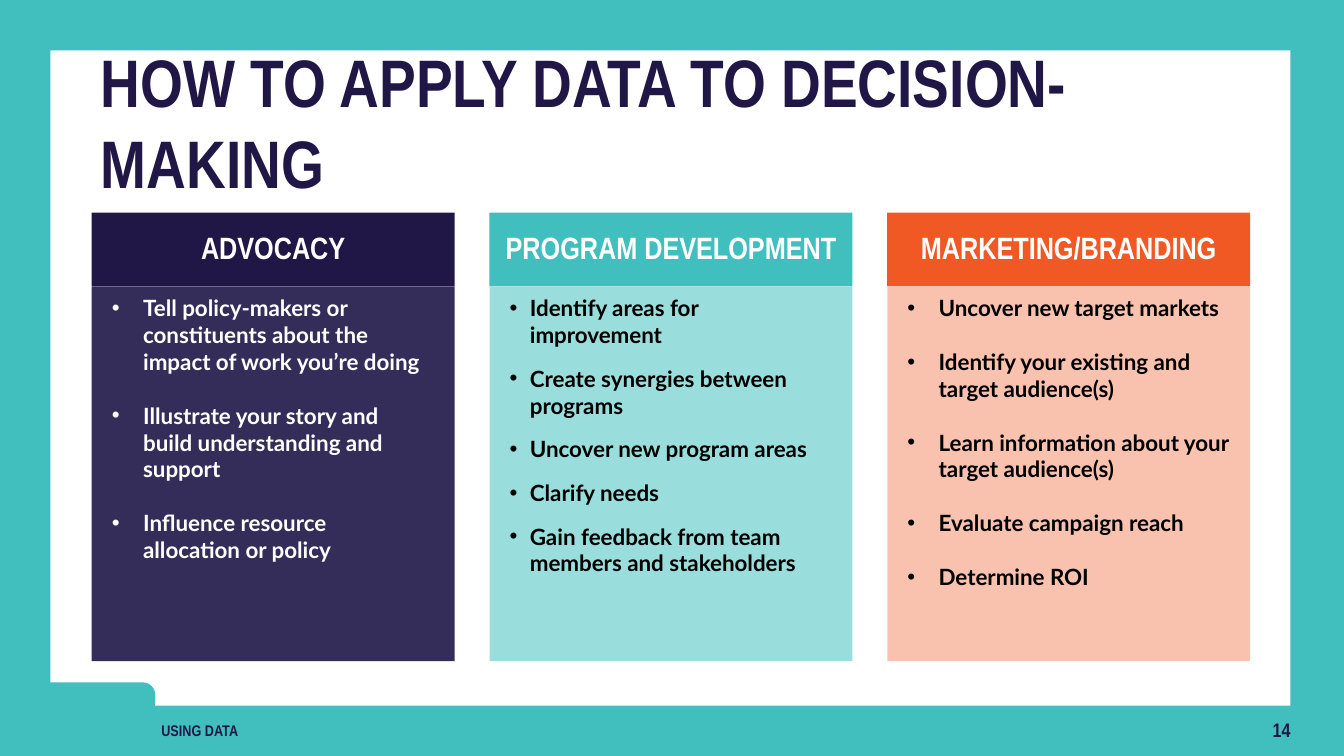
from dataclasses import dataclass

from lxml import etree
from pptx import Presentation
from pptx.dml.color import RGBColor
from pptx.enum.shapes import MSO_SHAPE
from pptx.enum.text import MSO_ANCHOR, MSO_AUTO_SIZE, PP_ALIGN
from pptx.oxml.ns import qn
from pptx.util import Inches, Pt

RECTANGLE, ROUNDED = MSO_SHAPE.RECTANGLE, MSO_SHAPE.ROUNDED_RECTANGLE
LEFT, CENTER, RIGHT = PP_ALIGN.LEFT, PP_ALIGN.CENTER, PP_ALIGN.RIGHT
TOP, MIDDLE, BOTTOM = MSO_ANCHOR.TOP, MSO_ANCHOR.MIDDLE, MSO_ANCHOR.BOTTOM
NO_AUTOFIT = MSO_AUTO_SIZE.NONE

COLORS = {
    "teal": "41BFBF", "navy": "201747", "orange": "F05824",
    "pale teal": "8FDBD9", "pale orange": "F9BCA7",
    "white": "FFFFFF", "black": "000000",
}
HEADING_FONT, LIST_FONT = "Arial Narrow", "Lato"

COLUMN_LEFT, COLUMN_WIDTH = 0.91, 3.6
COLUMN_PITCH = (8.8 - COLUMN_LEFT) / 2
HEADER_TOP, HEADER_HEIGHT, LIST_HEIGHT = 2.11, 0.73, 3.72


@dataclass
class Column:
    heading: str
    header_color: str
    list_color: str
    text_color: str
    placeholder: int
    indent: float
    gap: float
    right_inset: float
    items: list[str]


COLUMNS = [
    Column("ADVOCACY", "navy", "navy", "white", 2, 0.31, 19.2, 0.3, [
        "Tell policy-makers or constituents about the impact of work you’re doing",
        "Illustrate your story and build understanding and support",
        "Influence resource allocation or policy",
    ]),
    Column("PROGRAM DEVELOPMENT", "teal", "pale teal", "black", 3, 0.2, 12, 0.3, [
        "Identify areas for improvement",
        "Create synergies between programs",
        "Uncover new program areas",
        "Clarify needs",
        "Gain feedback from team members and stakeholders",
    ]),
    Column("MARKETING/BRANDING", "orange", "pale orange", "black", 4, 0.31, 19.2, 0.2, [
        "Uncover new target markets",
        "Identify your existing and target audience(s)",
        "Learn information about your target audience(s)",
        "Evaluate campaign reach",
        "Determine ROI",
    ]),
]


def color(name: str) -> RGBColor:
    return RGBColor.from_string(COLORS[name])


def place(shape, left: float, top: float, width: float, height: float) -> None:
    shape.left, shape.top = Inches(left), Inches(top)
    shape.width, shape.height = Inches(width), Inches(height)


def fill_shape(shape, name: str, opacity: int = 100) -> None:
    shape.fill.solid()
    shape.fill.fore_color.rgb = color(name)
    if opacity < 100:
        swatch = shape.fill._xPr.find(".//" + qn("a:srgbClr"))
        etree.SubElement(swatch, qn("a:alpha")).set("val", str(opacity * 1000))


def add_block(page, kind, name: str, left: float, top: float,
              width: float, height: float):
    block = page.shapes.add_shape(
        kind, Inches(left), Inches(top), Inches(width), Inches(height))
    block.shadow.inherit = False
    block.line.fill.background()
    fill_shape(block, name)
    return block


def set_frame(shape, anchor, insets: tuple, wrap: bool = True) -> None:
    frame = shape.text_frame
    frame.auto_size = NO_AUTOFIT
    frame.word_wrap = wrap
    frame.vertical_anchor = anchor
    (frame.margin_left, frame.margin_top,
     frame.margin_right, frame.margin_bottom) = map(Inches, insets)


def style_paragraph(para, size: int, name: str, font: str = HEADING_FONT,
                    align=LEFT) -> None:
    para.alignment = align
    para.space_before = Pt(0)
    for span in para.runs:
        span.font.size, span.font.name, span.font.bold = Pt(size), font, True
        span.font.color.rgb = color(name)


def set_line(shape, text: str, size: int, name: str, align=LEFT) -> None:
    shape.text_frame.text = text
    style_paragraph(shape.text_frame.paragraphs[0], size, name, align=align)


def add_bullet(para, indent: float) -> None:
    properties = para._p.get_or_add_pPr()
    properties.set("marL", str(Inches(indent)))
    properties.set("indent", str(-Inches(indent)))
    etree.SubElement(properties, qn("a:buFont")).set("typeface", "Arial")
    etree.SubElement(properties, qn("a:buChar")).set("char", "•")


def draw_column(page, column: Column, left: float) -> None:
    header = add_block(page, RECTANGLE, column.header_color,
                       left, HEADER_TOP, COLUMN_WIDTH, HEADER_HEIGHT)
    set_frame(header, MIDDLE, (0.14, 0.08, 0.14, 0.08))
    set_line(header, column.heading, 22, "white", CENTER)
    header.text_frame.paragraphs[0].line_spacing = 0.9

    body = page.placeholders[column.placeholder]
    place(body, left, HEADER_TOP + HEADER_HEIGHT, COLUMN_WIDTH, LIST_HEIGHT)
    fill_shape(body, column.list_color, opacity=90)
    set_frame(body, TOP, (0.2, 0.08, column.right_inset, 0.12))
    body.text_frame.text = "\n".join(column.items)
    for para in body.text_frame.paragraphs:
        add_bullet(para, column.indent)
        style_paragraph(para, 16, column.text_color, LIST_FONT)
        para.space_after = Pt(column.gap)


def main() -> None:
    deck = Presentation()
    deck.slide_width, deck.slide_height = Inches(13.33), Inches(7.5)
    page = deck.slides.add_slide(deck.slide_layouts.get_by_name("Comparison"))

    # Teal frame, white panel and corner tab, behind the placeholders
    page.background.fill.solid()
    page.background.fill.fore_color.rgb = color("teal")
    panel = add_block(page, RECTANGLE, "white", 0.5, 0.5, 12.3, 6.5)
    tab = add_block(page, ROUNDED, "teal", 0.28, 6.77, 1.26, 0.73)
    for position, block in enumerate((panel, tab), start=2):
        page.shapes._spTree.insert(position, block._element)

    # Title
    title = page.shapes.title
    place(title, 0.9, 0.9, 11.37, 1.15)
    set_frame(title, BOTTOM, (0.1, 0.05, 0.1, 0.05))
    set_line(title, "HOW TO APPLY DATA TO DECISION-MAKING", 48, "navy")

    # Three columns
    for index, column in enumerate(COLUMNS):
        draw_column(page, column, COLUMN_LEFT + index * COLUMN_PITCH)

    # Section name and page number
    section = page.placeholders[1]
    place(section, 1.5, 7.1, 2.6, 0.29)
    set_frame(section, MIDDLE, (0.1, 0, 0.1, 0), wrap=False)
    set_line(section, "USING DATA", 11, "navy")
    number = page.shapes.add_textbox(
        Inches(11.15), Inches(7.07), Inches(1.65), Inches(0.34))
    set_frame(number, MIDDLE, (0, 0.05, 0, 0.05))
    set_line(number, "14", 14, "navy", RIGHT)

    deck.save("out.pptx")


if __name__ == "__main__":
    main()
